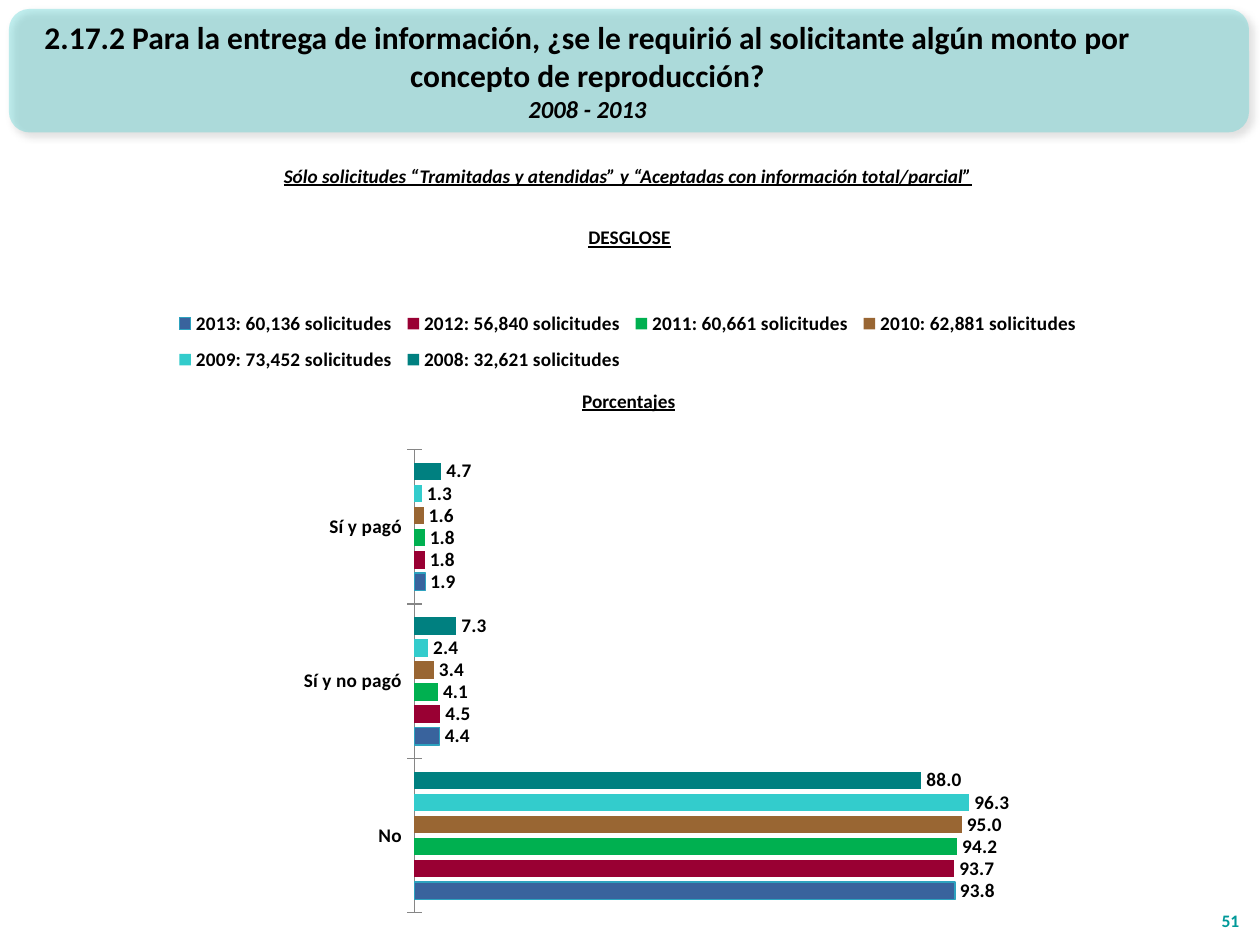
import pptx
import pptx.chart.data
import pptx.dml.color
import pptx.enum.chart
import pptx.enum.shapes
import pptx.enum.text
import pptx.oxml
import pptx.oxml.ns
import pptx.util
from pptx.util import Cm, Pt

RGBColor = pptx.dml.color.RGBColor
BLACK = RGBColor(0x00, 0x00, 0x00)
TURQUOISE = RGBColor(0x33, 0xCC, 0xCC)
PAGE_TEAL = RGBColor(0x00, 0x99, 0x99)
AXIS_GRAY = RGBColor(0x86, 0x86, 0x86)
OUTLINE_BLUE = RGBColor(0x2D, 0xA2, 0xBF)
FONT = "Calibri"
ALIGN = pptx.enum.text.PP_ALIGN
ANCHOR = pptx.enum.text.MSO_ANCHOR

CATEGORIES = ["Sí y pagó", "Sí y no pagó", "No"]
SERIES = [
    ("2008: 32,621 solicitudes", (4.7, 7.3, 88.0), RGBColor(0x00, 0x80, 0x80)),
    ("2009: 73,452 solicitudes", (1.3, 2.4, 96.3), TURQUOISE),
    ("2010: 62,881 solicitudes", (1.6, 3.4, 95.0), RGBColor(0x99, 0x66, 0x33)),
    ("2011: 60,661 solicitudes", (1.8, 4.1, 94.2), RGBColor(0x00, 0xB0, 0x50)),
    ("2012: 56,840 solicitudes", (1.8, 4.5, 93.7), RGBColor(0x99, 0x00, 0x33)),
    ("2013: 60,136 solicitudes", (1.9, 4.4, 93.8), RGBColor(0x39, 0x63, 0x9D)),
]


def style_font(font, size, color=BLACK, italic=None, underline=None):
    """Apply the bold slide font."""
    font.name = FONT
    font.size = Pt(size)
    font.bold = True
    font.italic = italic
    font.underline = underline
    font.color.rgb = color


def add_text(page, place, lines, anchor=ANCHOR.TOP, align=ALIGN.CENTER):
    """Add a text box from (text, font settings) lines."""
    box = page.shapes.add_textbox(*map(Cm, place))
    frame = box.text_frame
    frame.word_wrap = True
    frame.vertical_anchor = anchor
    frame.text = "\n".join(text for text, settings in lines)
    for para, (text, settings) in zip(frame.paragraphs, lines):
        para.alignment = align
        for span in para.runs:
            style_font(span.font, **settings)


def add_banner(page):
    """Add the translucent rounded band with its soft shadow."""
    banner = page.shapes.add_shape(
        pptx.enum.shapes.MSO_SHAPE.ROUNDED_RECTANGLE, Cm(0.18), Cm(0.18), Cm(25), Cm(2.49))
    banner.fill.solid()
    banner.fill.fore_color.rgb = TURQUOISE
    banner.line.fill.background()
    banner.shadow.inherit = False
    namespace = pptx.oxml.ns.nsdecls("a")
    properties = banner._element.spPr
    color = properties.find(".//" + pptx.oxml.ns.qn("a:srgbClr"))
    color.append(pptx.oxml.parse_xml(f'<a:alpha {namespace} val="30000"/>'))
    properties.find(pptx.oxml.ns.qn("a:effectLst")).append(pptx.oxml.parse_xml(
        f'<a:outerShdw {namespace} blurRad="{Pt(4)}" dist="{Pt(3)}" dir="2700000" algn="tl">'
        '<a:srgbClr val="000000"><a:alpha val="40000"/></a:srgbClr></a:outerShdw>'))


def layout_xml(x, y, width, height, target=""):
    """Build a manual layout as fractions of the chart."""
    return pptx.oxml.parse_xml(
        f'<c:layout {pptx.oxml.ns.nsdecls("c")}><c:manualLayout>{target}'
        '<c:xMode val="edge"/><c:yMode val="edge"/>'
        f'<c:x val="{x}"/><c:y val="{y}"/><c:w val="{width}"/><c:h val="{height}"/>'
        '</c:manualLayout></c:layout>')


def place_chart_parts(chart):
    """Fix the positions of the plot area and the legend."""
    plot_area = chart._chartSpace.chart.plotArea
    for old in plot_area.findall(pptx.oxml.ns.qn("c:layout")):
        plot_area.remove(old)
    plot_area.insert(0, layout_xml(0.29, 0.25, 0.68, 0.71, '<c:layoutTarget val="inner"/>'))
    legend = chart.legend._element
    for old in legend.findall(pptx.oxml.ns.qn("c:layout")):
        legend.remove(old)
    position = legend.find(pptx.oxml.ns.qn("c:legendPos"))
    position.addnext(layout_xml(0.05, 0.02, 0.9, 0.13))


def style_axes(chart):
    """Reverse the category axis and hide the value axis."""
    categories = chart.category_axis
    categories.reverse_order = True
    categories.major_tick_mark = pptx.enum.chart.XL_TICK_MARK.CROSS
    categories.format.line.color.rgb = AXIS_GRAY
    categories.format.line.width = Pt(0.75)
    values = chart.value_axis
    values.minimum_scale = 0
    values.maximum_scale = 120
    values.has_major_gridlines = False
    values.visible = False


def add_bar_chart(page):
    """Add the clustered bars of percentages by year."""
    data = pptx.chart.data.CategoryChartData(number_format="0.0")
    data.categories = CATEGORIES
    for name, values, color in SERIES:
        data.add_series(name, values)
    chart = page.shapes.add_chart(
        pptx.enum.chart.XL_CHART_TYPE.BAR_CLUSTERED,
        Cm(2.41), Cm(5.77), Cm(20.5), Cm(13.16), data).chart
    style_font(chart.font, 11)
    chart.has_title = False
    chart.has_legend = True
    chart.legend.position = pptx.enum.chart.XL_LEGEND_POSITION.TOP
    chart.legend.include_in_layout = False
    style_axes(chart)
    plot = chart.plots[0]
    plot.vary_by_categories = False
    plot.gap_width = 150
    plot.overlap = -25
    for series, (name, values, color) in zip(plot.series, SERIES):
        series.format.fill.solid()
        series.format.fill.fore_color.rgb = color
        labels = series.data_labels
        labels.show_value = True
        labels.number_format = "0.0"
        labels.number_format_is_linked = False
        labels.position = pptx.enum.chart.XL_LABEL_POSITION.OUTSIDE_END
    latest = plot.series[-1].format.line
    latest.color.rgb = OUTLINE_BLUE
    latest.width = Pt(0.75)
    place_chart_parts(chart)


def main():
    """Build the slide and save it."""
    deck = pptx.Presentation()
    deck.slide_width, deck.slide_height = Cm(25.4), Cm(19.05)
    page = deck.slides.add_slide(deck.slide_layouts[6])
    heading = {"size": 11, "underline": True}
    add_banner(page)
    add_text(page, (0.2, 0.23, 23.29, 2.39), [
        ("2.17.2 Para la entrega de información, ¿se le requirió al solicitante algún monto "
         "por concepto de reproducción?", {"size": 18}),
        ("2008 - 2013", {"size": 14, "italic": True}),
    ], ANCHOR.MIDDLE)
    add_text(page, (24.21, 17.88, 1.02, 1.02),
             [("51", {"size": 10, "color": PAGE_TEAL})], ANCHOR.BOTTOM, ALIGN.RIGHT)
    add_text(page, (1.78, 3.18, 21.77, 0.74), [
        ("Sólo solicitudes “Tramitadas y atendidas” y “Aceptadas con información total/parcial”",
         {**heading, "italic": True})])
    add_bar_chart(page)
    add_text(page, (10.62, 4.42, 4.14, 0.74), [("DESGLOSE", heading)])
    add_text(page, (10.49, 7.72, 4.37, 0.74), [("Porcentajes", heading)])
    deck.save("out.pptx")


if __name__ == "__main__":
    main()
